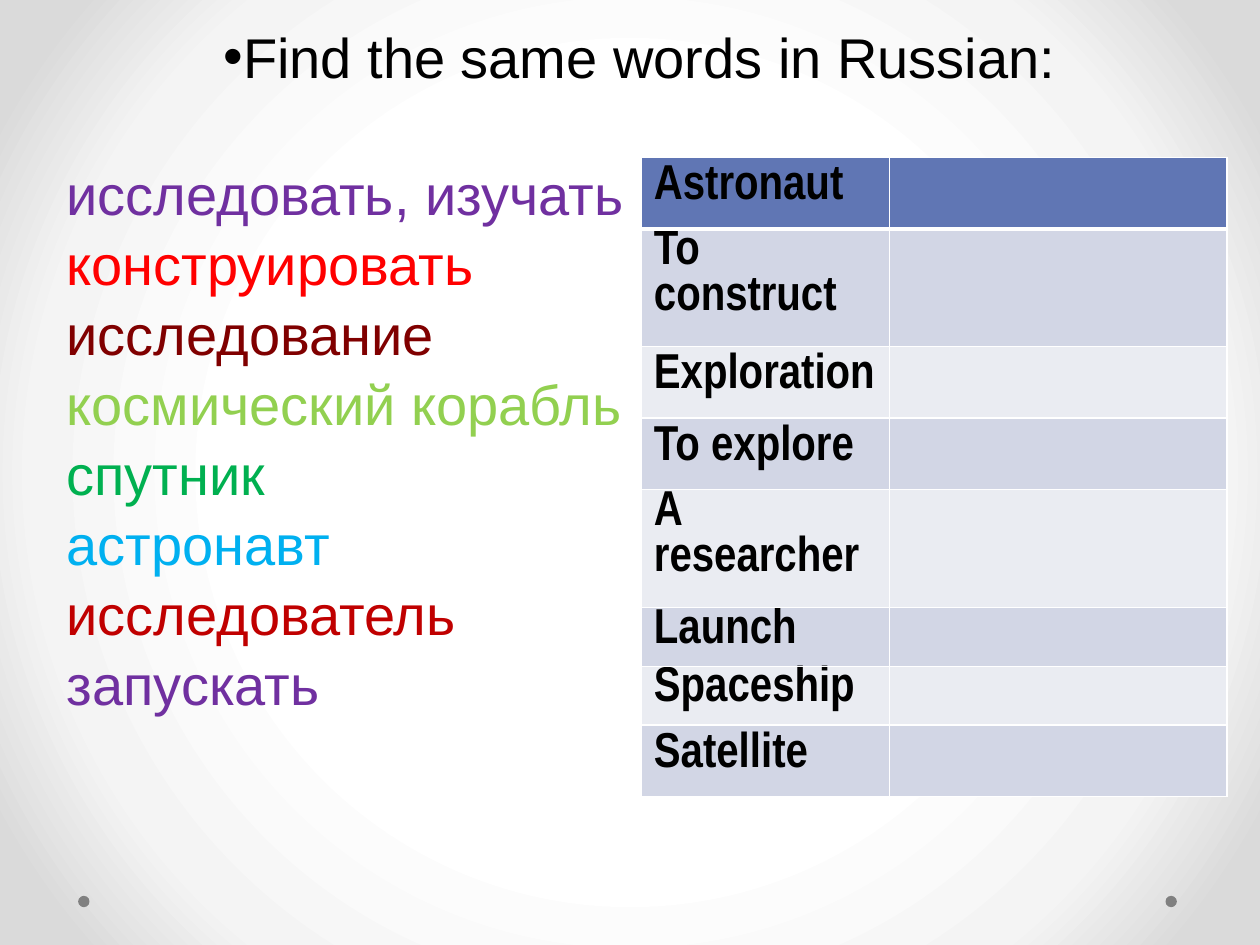
from dataclasses import dataclass

from lxml import etree
from pptx import Presentation
from pptx import util as u
from pptx.dml import color
from pptx.enum import shapes, text
from pptx.oxml import ns


@dataclass(frozen=True)
class Theme:
    font: str = "Arial"
    table_font: str = "Arial Narrow"
    text_size: int = 32
    table_size: int = 28
    ink: str = "000000"
    dot: str = "808080"
    border: str = "FFFFFF"
    header: str = "6076B4"
    bands: tuple = ("EAECF2", "D2D6E5")
    backdrop: tuple = ((50, "FFFFFF"), (76, "F4F4F4"), (92, "DADADA"))


WORDS = [
    ("исследовать, изучать", "7030A0"),
    ("конструировать", "FF0000"),
    ("исследование", "800000"),
    ("космический корабль", "92D050"),
    ("спутник", "00B050"),
    ("астронавт", "00B0F0"),
    ("исследователь", "C00000"),
    ("запускать", "7030A0"),
]
ROOMY, TIGHT, DOUBLE = 5.33, 4.65, 9
TERMS = [
    ("Astronaut", ROOMY),
    ("To construct", DOUBLE),
    ("Exploration", ROOMY),
    ("To explore", ROOMY),
    ("A researcher", DOUBLE),
    ("Launch", TIGHT),
    ("Spaceship", TIGHT),
    ("Satellite", ROOMY),
]


def add_element(parent, tag, index=None, **attributes):
    element = etree.Element(ns.qn(tag), attributes)
    parent.insert(len(parent) if index is None else index, element)
    return element


class SlideBuilder:
    COLUMNS, ROWS = 100, 75

    def __init__(self, presentation, theme):
        self.theme = theme
        self.width = presentation.slide_width
        self.height = presentation.slide_height
        self.slide = presentation.slides.add_slide(presentation.slide_layouts[6])

    def across(self, columns):
        return round(self.width * columns / self.COLUMNS)

    def down(self, rows):
        return round(self.height * rows / self.ROWS)

    def box(self, left, top, width, height):
        return self.across(left), self.down(top), self.across(width), self.down(height)

    def style(self, paragraph, font, size, ink, bold=False):
        for run in paragraph.runs:
            run.font.name = font
            run.font.size = u.Pt(size)
            run.font.bold = bold
            run.font.color.rgb = color.RGBColor.from_string(ink)

    def background(self):
        self.slide.background.fill.solid()
        properties = self.slide.element.xpath(".//p:bgPr")[0]
        properties.remove(properties[0])
        gradient = add_element(properties, "a:gradFill", 0, rotWithShape="1")
        stops = add_element(gradient, "a:gsLst")
        for position, value in self.theme.backdrop:
            stop = add_element(stops, "a:gs", pos=str(position * 1000))
            add_element(stop, "a:srgbClr", val=value)
        circle = add_element(gradient, "a:path", path="circle")
        add_element(circle, "a:fillToRect", l="50000", t="50000", r="50000", b="50000")

    def dot(self, left, top, size):
        shape = self.slide.shapes.add_shape(
            shapes.MSO_SHAPE.OVAL, *self.box(left, top, size, size))
        shape.shadow.inherit = False
        shape.fill.solid()
        shape.fill.fore_color.rgb = color.RGBColor.from_string(self.theme.dot)
        shape.line.fill.background()

    def word_list(self, title, words, area):
        theme = self.theme
        frame = self.slide.shapes.add_textbox(*self.box(*area)).text_frame
        frame.word_wrap = True
        heading = frame.paragraphs[0]
        heading.text = title
        heading.alignment = text.PP_ALIGN.CENTER
        properties = heading._p.get_or_add_pPr()
        properties.set("marL", "0")
        properties.set("indent", "0")
        add_element(properties, "a:buFont", typeface=theme.font)
        add_element(properties, "a:buChar", char="•")
        self.style(heading, theme.font, theme.text_size, theme.ink)
        for index, (word, ink) in enumerate(words):
            paragraph = frame.add_paragraph()
            paragraph.text = word
            paragraph.space_before = u.Pt(1.6 if index else 40)
            self.style(paragraph, theme.font, theme.text_size, ink)

    def cell_borders(self, cell, is_header):
        properties = cell._tc.get_or_add_tcPr()
        for index, side in enumerate("LRTB"):
            weight = 3 if is_header and side == "B" else 1
            line = add_element(properties, f"a:ln{side}", index, w=str(u.Pt(weight)))
            fill = add_element(line, "a:solidFill")
            add_element(fill, "a:srgbClr", val=self.theme.border)

    def term_table(self, terms, left, top, widths):
        theme = self.theme
        area = self.box(left, top, sum(widths), sum(height for _, height in terms))
        table = self.slide.shapes.add_table(len(terms), len(widths), *area).table
        for column, width in zip(table.columns, widths):
            column.width = self.across(width)
        for index, (term, height) in enumerate(terms):
            table.rows[index].height = self.down(height)
            for cell in table.rows[index].cells:
                cell.fill.solid()
                cell.fill.fore_color.rgb = color.RGBColor.from_string(
                    theme.bands[index % 2] if index else theme.header)
                self.cell_borders(cell, index == 0)
                if height != ROOMY:
                    cell.margin_top = cell.margin_bottom = 0
            label = table.cell(index, 0).text_frame
            label.text = term
            self.style(label.paragraphs[0], theme.table_font, theme.table_size,
                       theme.ink, bold=True)


def main():
    presentation = Presentation()
    presentation.slide_width = u.Inches(10)
    presentation.slide_height = u.Inches(7.5)
    builder = SlideBuilder(presentation, Theme())
    builder.background()
    for left in (6.2, 92.5):
        builder.dot(left, 71.1, 0.9)
    builder.word_list("Find the same words in Russian:", WORDS, (4.3, 1.3, 93, 64.9))
    builder.term_table(TERMS, 50.9, 12.5, (19.7, 26.8))
    presentation.save("out.pptx")


if __name__ == "__main__":
    main()
